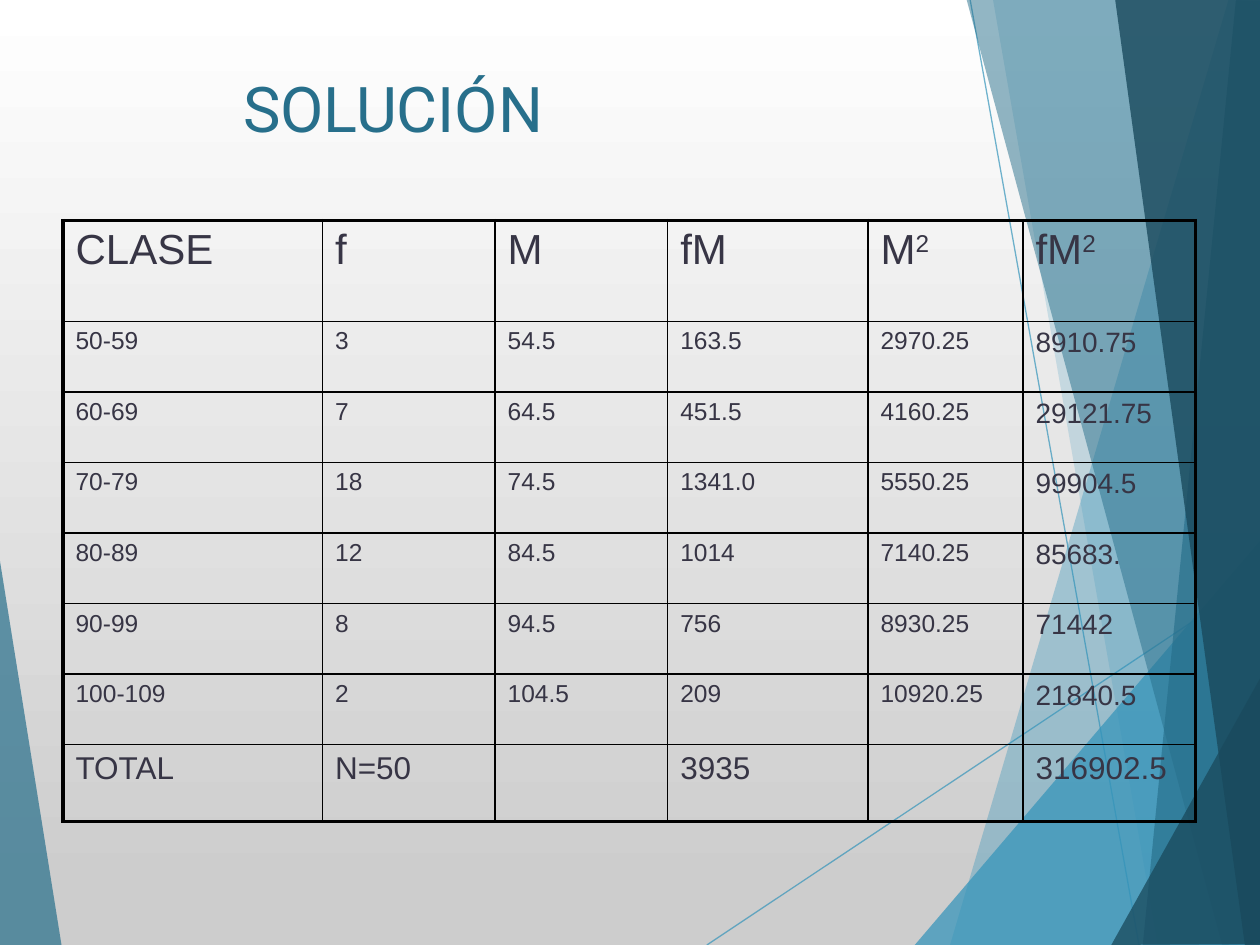
from dataclasses import dataclass
from lxml.etree import SubElement
from pptx import Presentation
from pptx.dml.color import RGBColor as RGB
from pptx.enum.shapes import MSO_CONNECTOR as Link
from pptx.enum.text import MSO_ANCHOR as Anchor, PP_ALIGN as Align
from pptx.oxml import parse_xml
from pptx.oxml.ns import nsdecls, qn
from pptx.util import Inches, Pt


@dataclass
class Theme:
    sky: str = "3494BA"
    teal: str = "276F8B"
    deep: str = "1A4A5D"
    ink: str = "373545"
    rule: str = "000000"
    top: str = "FFFFFF"
    base: str = "CDCDCD"
    title: int = 36
    head: int = 24
    body: int = 14
    last: int = 16
    total: int = 18
    thin: float = 1
    thick: float = 2.25


theme = Theme()


def fade(shape, alpha):
    for color in shape.element.xpath("./p:spPr//a:srgbClr"):
        SubElement(color, qn("a:alpha")).set("val", str(alpha * 1000))


def style(font, name, size, color):
    font.name = name
    font.size = Pt(size)
    font.color.rgb = RGB.from_string(color)


deck = Presentation()
deck.slide_width, deck.slide_height = Inches(10), Inches(7.5)
slide = deck.slides.add_slide(deck.slide_layouts[5])
shapes = slide.shapes

back = slide.background.fill
back.gradient()
back.gradient_angle = 270
for stop, color, place in zip(back.gradient_stops, (theme.top, theme.base), (0, 0.94)):
    stop.color.rgb = RGB.from_string(color)
    stop.position = place

for ends in [(5.61, 7.5, 10.01, 4.57), (7.7, 0, 9.04, 7.5)]:
    line = shapes.add_connector(Link.STRAIGHT, *map(Inches, ends))
    line.line.color.rgb = RGB.from_string(theme.sky)
    line.line.width = Pt(0.75)
    fade(line, 70)
    SubElement(line.element.spPr, qn("a:effectLst"))

facets = [
    (theme.sky, 36, [(9.75, 0), (7.54, 7.5), (10.02, 7.51), (10.01, 0.01)]),
    (theme.sky, 20, [(7.88, -0.01), (9.19, 7.5), (10.01, 7.5), (10.01, -0.01)]),
    (theme.sky, 72, [(7.26, 7.5), (10, 4.29), (10.01, 7.5)]),
    (theme.teal, 50, [(7.67, -0.01), (9.7, 7.5), (10.01, 7.49), (10.01, -0.01)]),
    (theme.teal, 66, [(9.81, -0.01), (9.07, 7.5), (10.01, 7.5), (10, -0.01)]),
    (theme.deep, 80, [(8.85, -0.01), (9.88, 7.5), (10.02, 7.5), (10, -0.01)]),
    (theme.deep, 76, [(8.82, 7.5), (10.02, 5.35), (10.02, 7.49)]),
    (theme.teal, 70, [(-0.01, 4.39), (0.49, 7.51), (-0.01, 7.5)]),
]
for color, alpha, points in facets:
    first, *rest = [(Inches(x), Inches(y)) for x, y in points]
    pen = shapes.build_freeform(*first)
    pen.add_line_segments(rest)
    facet = pen.convert_to_shape()
    facet.shadow.inherit = False
    facet.line.fill.background()
    facet.fill.solid()
    facet.fill.fore_color.rgb = RGB.from_string(color)
    fade(facet, alpha)

title = shapes.title
shapes.element.append(title.element)
title.left, title.top = Inches(1.83), Inches(0.5)
title.width, title.height = Inches(7.67), Inches(1.42)
title.text_frame.text = "SOLUCIÓN"
title.text_frame.vertical_anchor = Anchor.TOP
label = title.text_frame.paragraphs[0]
label.alignment = Align.LEFT
style(label.runs[0].font, "Roboto", theme.title, theme.teal)

rows = [
    ["CLASE", "f", "M", "fM", "M2", "fM2"],
    ["50-59", "3", "54.5", "163.5", "2970.25", "8910.75"],
    ["60-69", "7", "64.5", "451.5", "4160.25", "29121.75"],
    ["70-79", "18", "74.5", "1341.0", "5550.25", "99904.5"],
    ["80-89", "12", "84.5", "1014", "7140.25", "85683."],
    ["90-99", "8", "94.5", "756", "8930.25", "71442"],
    ["100-109", "2", "104.5", "209", "10920.25", "21840.5"],
    ["TOTAL", "N=50", "", "3935", "", "316902.5"],
]
wide = [2.06, 1.37, 1.37, 1.59, 1.23, 1.37]
high = [0.8] + [0.56] * 6 + [0.61]
end, edge = len(rows) - 1, len(wide) - 1
frame = shapes.add_table(
    len(rows), len(wide), Inches(0.5), Inches(1.75), Inches(sum(wide)), Inches(sum(high))
)
table = frame.table
table.first_row = table.horz_banding = False
for column, width in zip(table.columns, wide):
    column.width = Inches(width)
for row, height in zip(table.rows, high):
    row.height = Inches(height)

for r, texts in enumerate(rows):
    for c, text in enumerate(texts):
        cell = table.cell(r, c)
        cell.fill.background()
        size = theme.last if c == edge else theme.body
        size = {0: theme.head, end: theme.total}.get(r, size)
        para = cell.text_frame.paragraphs[0]
        para.space_before = Pt(size * 0.2)
        style(para.font, "Arial", size, theme.ink)
        power = r == 0 and text.endswith("2")
        parts = [text[:-1], "2"] if power else [text]
        for part in filter(None, parts):
            run = para.add_run()
            run.text = part
            style(run.font, "Arial", size, theme.ink)

for props in frame.element.xpath('.//a:tr[1]//a:r[a:t="2"]/a:rPr'):
    props.set("baseline", "30000")

for spot, props in enumerate(frame.element.xpath(".//a:tcPr")):
    r, c = divmod(spot, len(wide))
    outer = [("L", c == 0), ("R", c == edge), ("T", r == 0), ("B", r == end)]
    for order, (side, bold) in enumerate(outer):
        width = Pt(theme.thick if bold else theme.thin)
        border = parse_xml(
            f'<a:ln{side} {nsdecls("a")} w="{width}"><a:solidFill>'
            f'<a:srgbClr val="{theme.rule}"/></a:solidFill></a:ln{side}>'
        )
        props.insert(order, border)

deck.save("out.pptx")
